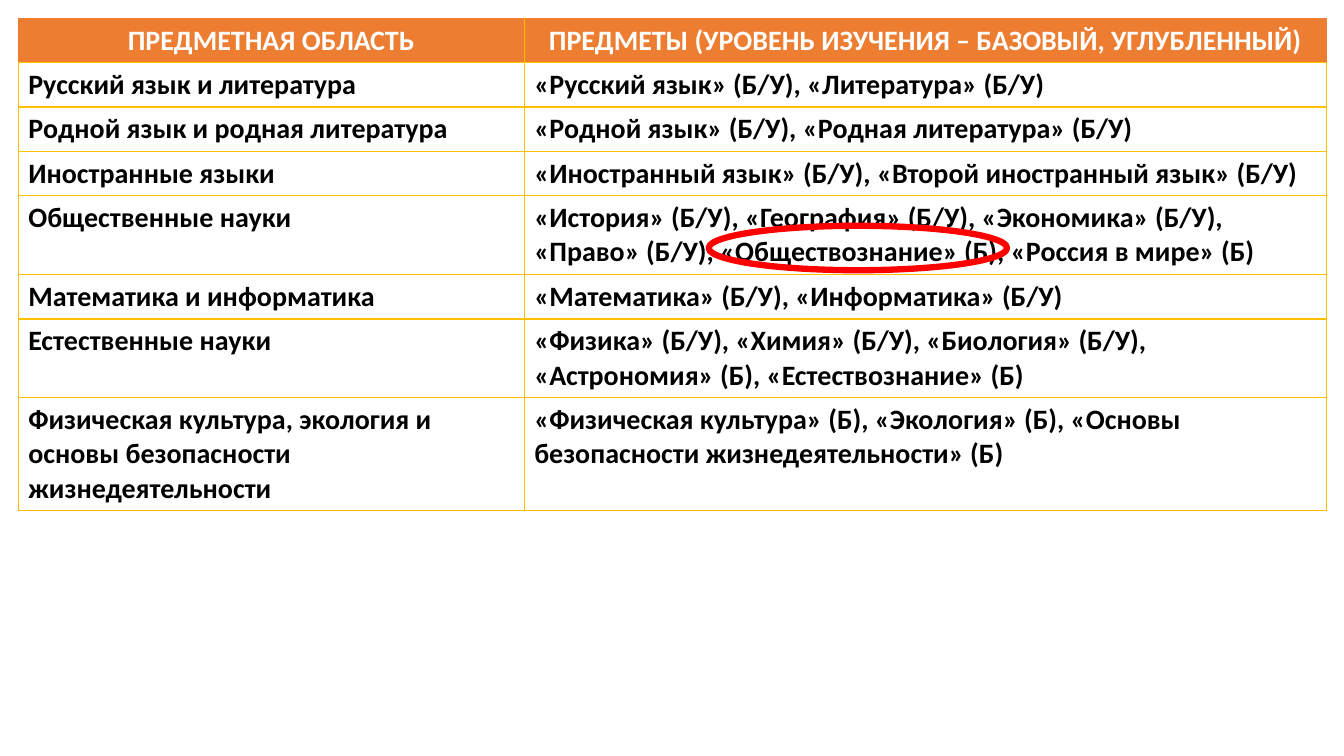
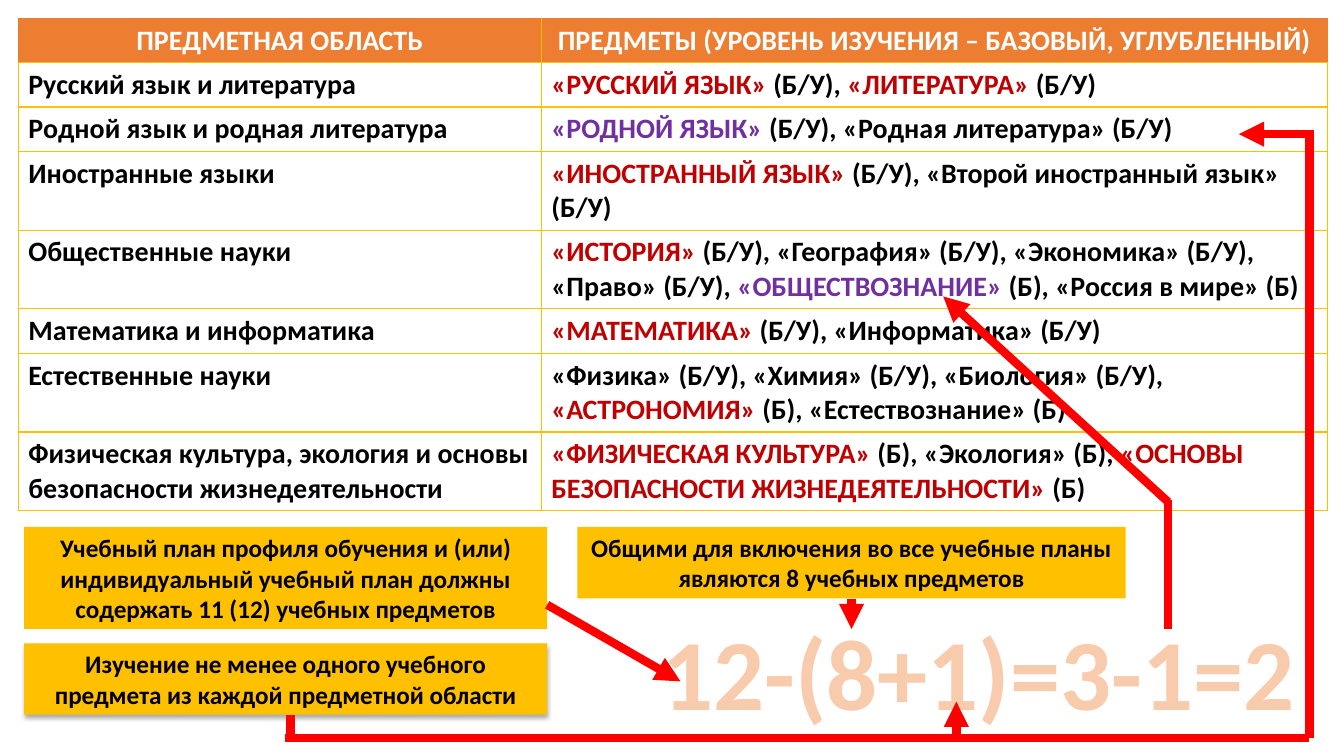
from lxml import etree
from pptx import Presentation
from pptx.dml.color import RGBColor
from pptx.enum.shapes import MSO_CONNECTOR, MSO_SHAPE
from pptx.enum.text import MSO_ANCHOR, PP_ALIGN
from pptx.oxml.ns import qn
from pptx.util import Cm, Pt

STRAIGHT = MSO_CONNECTOR.STRAIGHT
ELLIPSE, RECTANGLE = MSO_SHAPE.OVAL, MSO_SHAPE.RECTANGLE
CENTER, LEFT = PP_ALIGN.CENTER, PP_ALIGN.LEFT
MIDDLE = MSO_ANCHOR.MIDDLE

WHITE = RGBColor(0xFF, 0xFF, 0xFF)
BLACK = RGBColor(0x00, 0x00, 0x00)
ORANGE = RGBColor(0xED, 0x7D, 0x31)
PEACH = RGBColor(0xF8, 0xCB, 0xAD)
GOLD = RGBColor(0xFF, 0xC0, 0x00)
RED = RGBColor(0xFF, 0x00, 0x00)
CRIMSON = RGBColor(0xC0, 0x00, 0x00)
PURPLE = RGBColor(0x70, 0x30, 0xA0)
FONT = "Calibri"

HEADINGS = ["ПРЕДМЕТНАЯ ОБЛАСТЬ", "ПРЕДМЕТЫ (УРОВЕНЬ ИЗУЧЕНИЯ – БАЗОВЫЙ, УГЛУБЛЕННЫЙ)"]
AREAS = [
    "Русский язык и литература",
    "Родной язык и родная литература",
    "Иностранные языки",
    "Общественные науки",
    "Математика и информатика",
    "Естественные науки",
    "Физическая культура, экология и основы безопасности жизнедеятельности",
]

# Subjects per area: a list of paragraphs, each a list of (text, colour) runs
plain_subjects = [
    ["«Русский язык» (Б/У), «Литература» (Б/У)"],
    ["«Родной язык» (Б/У), «Родная литература» (Б/У)"],
    ["«Иностранный язык» (Б/У), «Второй иностранный язык» (Б/У)"],
    ["«История» (Б/У), «География» (Б/У), «Экономика» (Б/У), «Право» (Б/У), "
     "«Обществознание» (Б), «Россия в мире» (Б)"],
    ["«Математика» (Б/У), «Информатика» (Б/У)"],
    ["«Физика» (Б/У), «Химия» (Б/У), «Биология» (Б/У),",
     "«Астрономия» (Б), «Естествознание» (Б)"],
    ["«Физическая культура» (Б), «Экология» (Б), "
     "«Основы безопасности жизнедеятельности» (Б)"],
]
all_subjects = [[[(text, BLACK)] for text in texts] for texts in plain_subjects]
common_subjects = [
    [[("«РУССКИЙ ЯЗЫК» ", CRIMSON), ("(Б/У), ", BLACK),
      ("«ЛИТЕРАТУРА» ", CRIMSON), ("(Б/У)", BLACK)]],
    [[("«РОДНОЙ ЯЗЫК» ", PURPLE), ("(Б/У), «Родная литература» (Б/У)", BLACK)]],
    [[("«ИНОСТРАННЫЙ ЯЗЫК» ", CRIMSON), ("(Б/У), «Второй иностранный язык» (Б/У)", BLACK)]],
    [[("«ИСТОРИЯ» ", CRIMSON),
      ("(Б/У), «География» (Б/У), «Экономика» (Б/У), «Право» (Б/У), ", BLACK),
      ("«ОБЩЕСТВОЗНАНИЕ» ", PURPLE), ("(Б), «Россия в мире» (Б)", BLACK)]],
    [[("«МАТЕМАТИКА» ", CRIMSON), ("(Б/У), «Информатика» (Б/У)", BLACK)]],
    [[("«Физика» (Б/У), «Химия» (Б/У), «Биология» (Б/У),", BLACK)],
     [("«АСТРОНОМИЯ» ", CRIMSON), ("(Б), «Естествознание» (Б)", BLACK)]],
    [[("«ФИЗИЧЕСКАЯ КУЛЬТУРА» ", CRIMSON), ("(Б), «Экология» (Б), ", BLACK),
      ("«ОСНОВЫ БЕЗОПАСНОСТИ ЖИЗНЕДЕЯТЕЛЬНОСТИ»", CRIMSON), (" (Б)", BLACK)]],
]


def write(frame, paragraphs, size, align):
    for index, runs in enumerate(paragraphs):
        paragraph = frame.paragraphs[0] if index == 0 else frame.add_paragraph()
        paragraph.alignment = align
        for text, color in runs:
            run = paragraph.add_run()
            run.text = text
            run.font.name, run.font.size, run.font.bold = FONT, Pt(size), True
            run.font.color.rgb = color


def add_outline(parent, tag, color, width):
    line = etree.SubElement(parent, qn(tag), w=str(Pt(width)))
    fill = etree.SubElement(line, qn("a:solidFill"))
    etree.SubElement(fill, qn("a:srgbClr"), val=str(color))
    return line


prs = Presentation()
prs.slide_width, prs.slide_height = Cm(33.87), Cm(19.05)
blank = prs.slide_layouts[6]

# Both slides: table of subject areas
slides = []
for area_width, subject_width, subjects in [
    (12.75, 20.22, all_subjects),
    (13.18, 19.81, common_subjects),
]:
    slide = prs.slides.add_slide(blank)
    slides.append(slide)
    rows = [[[[(heading, WHITE)]] for heading in HEADINGS]]
    rows += [[[[(area, BLACK)]], listed] for area, listed in zip(AREAS, subjects)]
    curriculum = slide.shapes.add_table(
        len(rows), 2, Cm(0.46), Cm(0.46),
        Cm(area_width + subject_width), Cm(1.04 * len(rows))).table
    curriculum.horz_banding = False
    curriculum.columns[0].width = Cm(area_width)
    curriculum.columns[1].width = Cm(subject_width)
    for r, row in enumerate(rows):
        for c, paragraphs in enumerate(row):
            cell = curriculum.cell(r, c)
            is_header = r == 0
            write(cell.text_frame, paragraphs, 20, CENTER if is_header else LEFT)
            header_edges = ("a:lnT", "a:lnL" if c == 0 else "a:lnR") if is_header else ()
            for edge in ("a:lnL", "a:lnR", "a:lnT", "a:lnB"):
                color, width = (ORANGE, 0.5) if edge in header_edges else (GOLD, 1)
                add_outline(cell._tc.get_or_add_tcPr(), edge, color, width)
            if is_header:
                cell.fill.solid()
                cell.fill.fore_color.rgb = ORANGE
            else:
                cell.fill.background()

all_slide, common_slide = slides

# Slide 1: ring around social studies
ring = all_slide.shapes.add_shape(ELLIPSE, Cm(17.86), Cm(5.69), Cm(7.52), Cm(1.12))
ring.shadow.inherit = False
ring.fill.background()
ring.line.color.rgb = RED
ring.line.width = Pt(4.5)

# Slide 2: requirement boxes
for left, top, width, height, raised, requirement in [
    (0.61, 13.28, 13.18, 2.57, False,
     "Учебный план профиля обучения и (или) индивидуальный учебный план "
     "должны содержать 11 (12) учебных предметов"),
    (0.61, 16.21, 13.18, 1.8, True,
     "Изучение не менее одного учебного предмета из каждой предметной области"),
    (14.55, 13.28, 13.82, 1.8, False,
     "Общими для включения во все учебные планы являются 8 учебных предметов"),
]:
    box = common_slide.shapes.add_shape(
        RECTANGLE, Cm(left), Cm(top), Cm(width), Cm(height))
    box.fill.solid()
    box.fill.fore_color.rgb = GOLD
    box.line.fill.background()
    box.shadow.inherit = False
    box.text_frame.word_wrap = True
    box.text_frame.vertical_anchor = MIDDLE
    write(box.text_frame, [[(requirement, BLACK)]], 18, CENTER)
    if raised:
        effects = box._element.spPr.find(qn("a:effectLst"))
        shadow = etree.SubElement(
            effects, qn("a:outerShdw"), blurRad=str(Pt(3.5)), dist=str(Pt(2.2)),
            dir="5400000", algn="t", rotWithShape="0")
        shade = etree.SubElement(shadow, qn("a:srgbClr"), val=str(BLACK))
        etree.SubElement(shade, qn("a:alpha"), val="32000")

# Slide 2: subject count formula
formula = common_slide.shapes.add_textbox(Cm(16.36), Cm(15.24), Cm(16.61), Cm(3.33))
formula.text_frame.word_wrap = False
write(formula.text_frame, [[("12-(8+1)=3-1=2", PEACH)]], 72, CENTER)
formula_props = formula.text_frame.paragraphs[0].runs[0].font._element
formula_props.insert(0, add_outline(formula_props, "a:ln", ORANGE, 1.75))

# Slide 2: arrows linking boxes, formula and table
for x1, y1, x2, y2, has_head in [
    (13.79, 15.24, 17.15, 17.17, True),
    (21.46, 15.09, 21.46, 15.85, True),
    (7.32, 18.01, 7.32, 18.59, False),
    (7.19, 18.59, 33, 18.59, False),
    (33, 18.59, 33, 3.28, False),
    (33, 3.38, 31.22, 3.38, True),
    (24.1, 18.59, 24.1, 17.68, True),
    (29.44, 15.85, 29.44, 12.6, False),
    (29.44, 12.65, 23.77, 7.47, True),
]:
    arrow = common_slide.shapes.add_connector(STRAIGHT, Cm(x1), Cm(y1), Cm(x2), Cm(y2))
    arrow.line.color.rgb = RED
    arrow.line.width = Pt(6)
    if has_head:
        etree.SubElement(arrow.line._get_or_add_ln(), qn("a:tailEnd"), type="triangle")
    etree.SubElement(arrow._element.spPr, qn("a:effectLst"))

prs.save("out.pptx")
